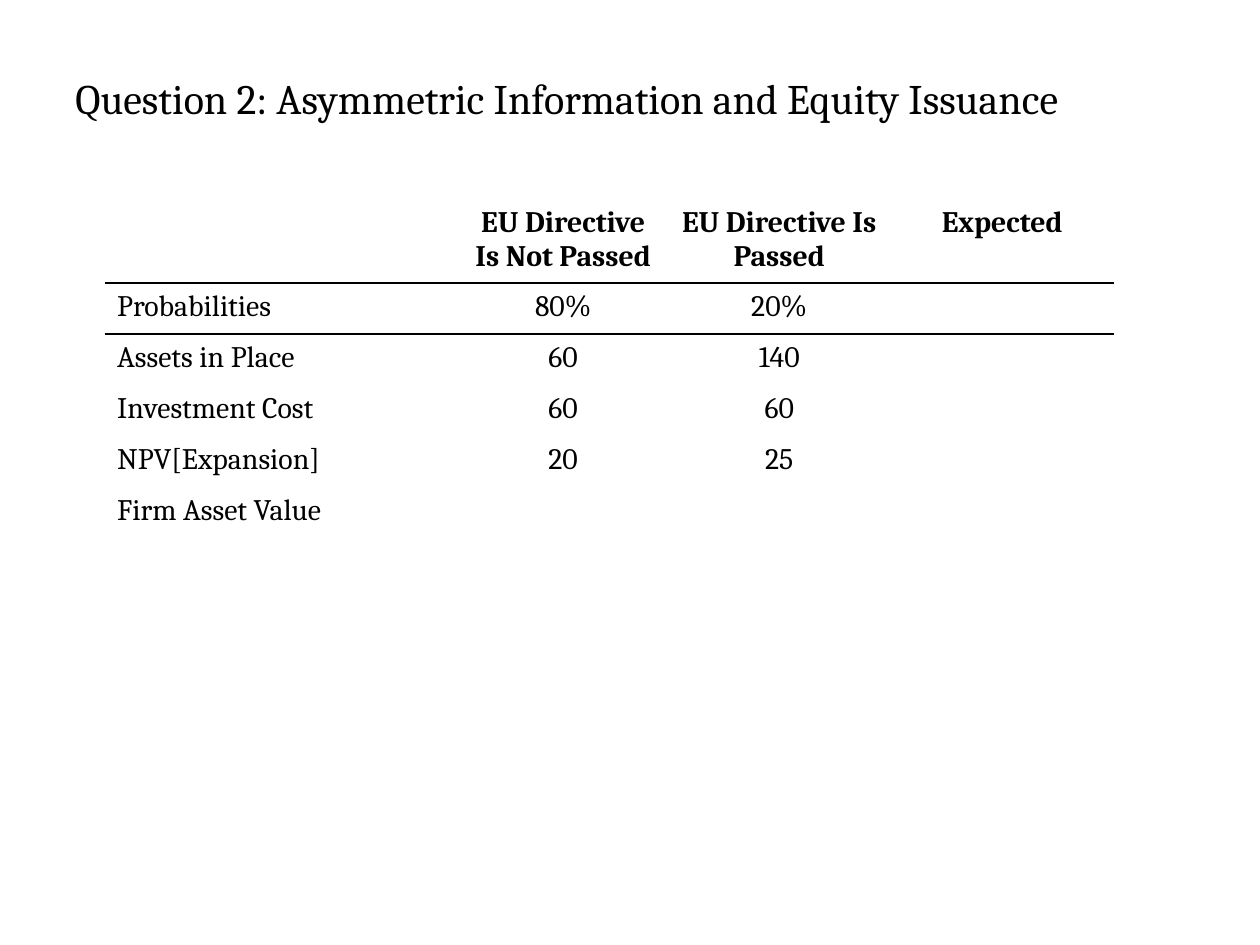
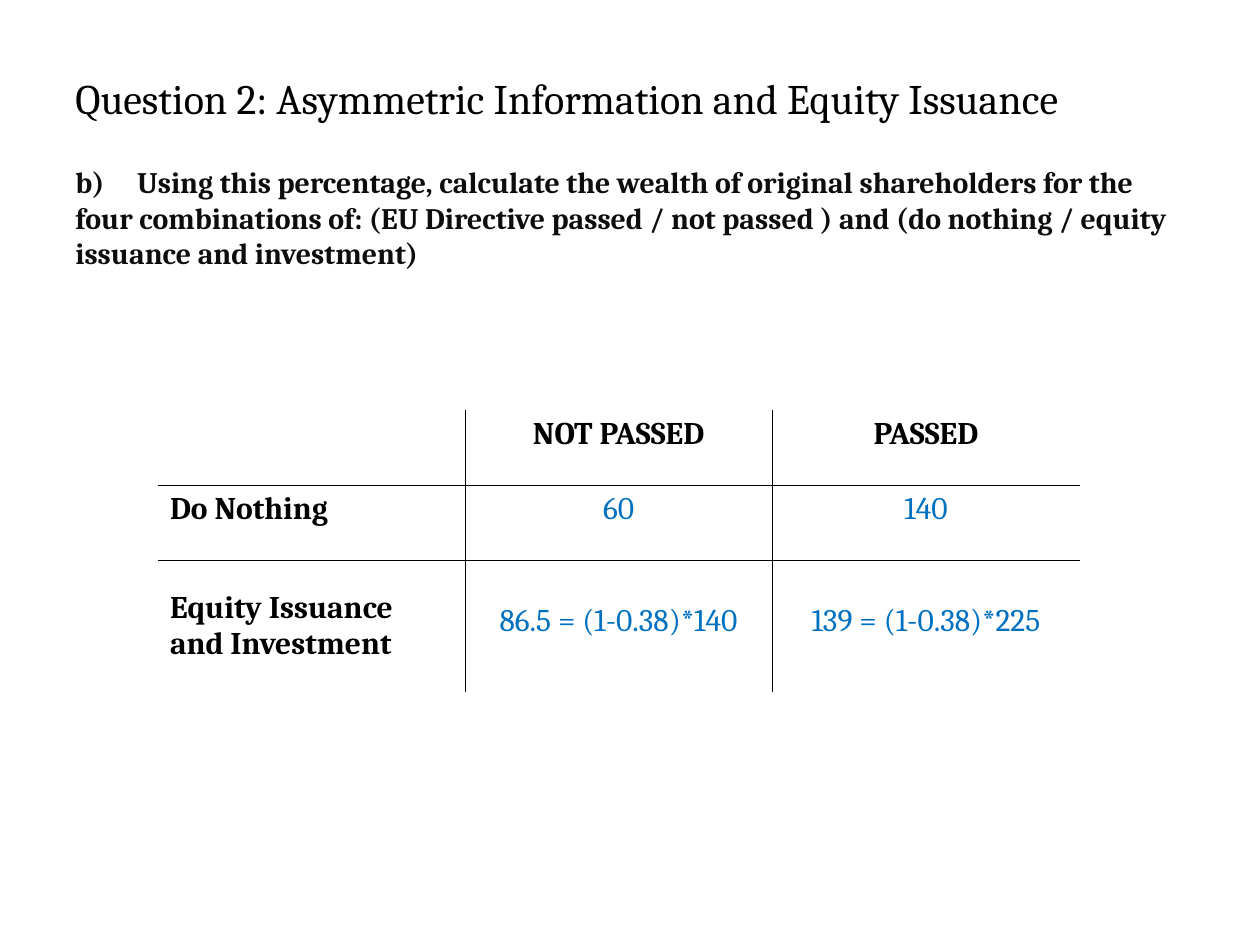
from pptx import Presentation
from pptx.util import Inches, Pt
from pptx.dml.color import RGBColor
from pptx.enum.text import PP_ALIGN as Align, MSO_ANCHOR as Anchor
from lxml.etree import SubElement as Sub
from pptx.oxml.ns import qn

FONT, BLACK, GREY, BLUE = "Cambria", "000000", "0D0D0D", "0070C0"
PLAIN = "{2D5ABB26-0587-4C30-8999-92F81FD0307C}"  # no style, no grid
TITLE = "Question 2: Asymmetric Information and Equity Issuance"


def put(box, text, size=17, hue=BLACK, bold=False, align=Align.LEFT, before=0):
    """Write one formatted paragraph into a text frame and return it."""
    para = box.paragraphs[0]
    para.alignment, para.space_before = align, Pt(before)
    para.font.size = Pt(size)
    if text:
        run = para.add_run()
        run.text = text
        font = run.font
        font.name, font.size, font.bold = FONT, Pt(size), bold
        font.color.rgb = RGBColor.from_string(hue)
    return para


def grid(slide, left, top, cols, rows, width, stem):
    """Add a plain table ruled below its head and, with stem, beside its labels."""
    table = slide.shapes.add_table(len(rows), len(cols), Inches(left), Inches(top),
                                   Inches(sum(cols)), Inches(sum(rows))).table
    table._tbl.tblPr.find(qn("a:tableStyleId")).text = PLAIN
    table.first_row = table.horz_banding = False
    for col, size in zip(table.columns, cols):
        col.width = Inches(size)
    for row, size in zip(table.rows, rows):
        row.height = Inches(size)
    for r in range(len(rows)):
        for c in range(len(cols)):
            cell = table.cell(r, c)
            props = cell._tc.get_or_add_tcPr()
            sides = {"L": stem and c == 1, "R": stem and c == 0,
                     "T": r == 1, "B": r == 0}
            for side, on in sides.items():
                if on:
                    line = Sub(props, qn("a:ln" + side), w=str(Pt(width)))
                    Sub(Sub(line, qn("a:solidFill")), qn("a:srgbClr"), val=BLACK)
            cell.fill.background()
    return table


deck = Presentation()
deck.slide_width, deck.slide_height = Inches(10), Inches(7.5)

# Shared title
pages = []
for _ in range(2):
    page = deck.slides.add_slide(deck.slide_layouts[6])
    head = page.shapes.add_textbox(Inches(0.5), Inches(0.3), Inches(9), Inches(0.95))
    head.text_frame.word_wrap = True
    head.text_frame.vertical_anchor = Anchor.MIDDLE
    put(head.text_frame, TITLE, size=24)
    pages.append(page)
first, second = pages

# Slide 1: the firm in both states
states = [
    ["", "EU Directive Is Not Passed", "EU Directive Is Passed", "Expected"],
    ["Probabilities", "80%", "20%", ""],
    ["Assets in Place", "60", "140", ""],
    ["Investment Cost", "60", "60", ""],
    ["NPV[Expansion]", "20", "25", ""],
    ["Firm Asset Value", "", "", ""],
]
table = grid(first, 0.83, 1.58, [2.81, 1.66, 1.77, 1.77], [0.65] + [0.405] * 5,
             width=1, stem=False)
for r, row in enumerate(states):
    for c, text in enumerate(row):
        put(table.cell(r, c).text_frame, text, bold=r == 0,
            align=Align.CENTER if c else Align.LEFT)

# Slide 2: the question
body = second.shapes.add_textbox(Inches(0.5), Inches(1.25), Inches(9), Inches(1))
body.text_frame.word_wrap = True
ask = put(body.text_frame,
          "b)\tUsing this percentage, calculate the wealth of original shareholders "
          "for the four combinations of: (EU Directive passed / not passed ) and "
          "(do nothing / equity issuance and investment)",
          hue=GREY, bold=True, before=3.4)
tabs = Sub(ask._p.get_or_add_pPr(), qn("a:tabLst"))
Sub(tabs, qn("a:tab"), pos=str(Inches(0.49)), algn="l")

# Slide 2: wealth of the shareholders
wealth = [
    ["", "NOT PASSED", "PASSED"],
    ["Do Nothing", "60", "140"],
    ["Equity Issuance and Investment", "86.5 = (1-0.38)*140", "139 = (1-0.38)*225"],
]
table = grid(second, 1.25, 3.25, [2.44] * 3, [0.6, 0.6, 1.04], width=0.5, stem=True)
for r, row in enumerate(wealth):
    for c, text in enumerate(row):
        cell, value = table.cell(r, c), r > 0 and c > 0
        put(cell.text_frame, text, size=18, hue=BLUE if value else BLACK,
            bold=not value, align=Align.CENTER if c else Align.LEFT)
        if r == 2 and value:
            cell.margin_top = Inches(0.34)  # one line lower
table.cell(2, 0).vertical_anchor = Anchor.MIDDLE

deck.save("out.pptx")
